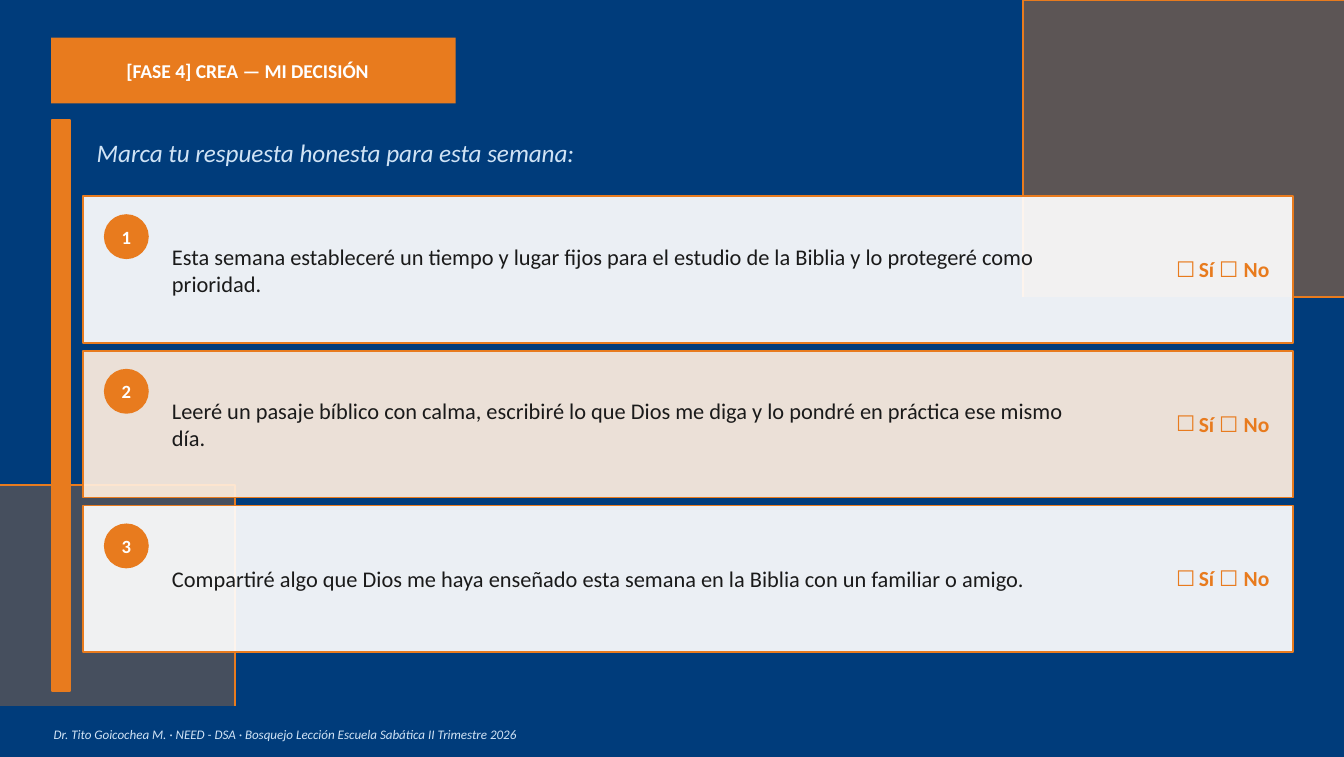
from lxml import etree
from pptx import Presentation
from pptx.dml.color import RGBColor
from pptx.enum.shapes import MSO_CONNECTOR, MSO_SHAPE
from pptx.enum.text import MSO_ANCHOR, MSO_AUTO_SIZE, PP_ALIGN
from pptx.oxml.ns import qn
from pptx.util import Inches, Pt

NAVY = RGBColor(0x00, 0x3C, 0x7B)
ORANGE = RGBColor(0xE8, 0x7B, 0x1E)
WHITE = RGBColor(0xFF, 0xFF, 0xFF)
CREAM = RGBColor(0xFF, 0xEF, 0xDF)
SKY = RGBColor(0xD0, 0xE3, 0xF5)
INK = RGBColor(0x1A, 0x1A, 0x1A)
RECT, OVAL = MSO_SHAPE.RECTANGLE, MSO_SHAPE.OVAL
STRAIGHT = MSO_CONNECTOR.STRAIGHT
LEFT, CENTER = PP_ALIGN.LEFT, PP_ALIGN.CENTER
MIDDLE, FIXED = MSO_ANCHOR.MIDDLE, MSO_AUTO_SIZE.NONE
WIDE, HIGH = 10, 5.63
PLEDGES = [
    "Esta semana estableceré un tiempo y lugar fijos para el estudio de la Biblia "
    "y lo protegeré como\vprioridad.",
    "Leeré un pasaje bíblico con calma, escribiré lo que Dios me diga "
    "y lo pondré en práctica ese mismo\vdía.",
    "Compartiré algo que Dios me haya enseñado esta semana en la Biblia "
    "con un familiar o amigo.",
]


def write(shape, text, size=12, color=INK, bold=False, italic=False,
          align=LEFT, inset=0.01):
    frame = shape.text_frame
    frame.word_wrap = True
    frame.auto_size = FIXED
    frame.vertical_anchor = MIDDLE
    frame.margin_left = Inches(inset)
    frame.margin_right = frame.margin_top = frame.margin_bottom = 0
    para = frame.paragraphs[0]
    para.text = text
    para.alignment = align
    for run in para.runs:
        font = run.font
        font.name, font.size, font.color.rgb = "Calibri", Pt(size), color
        font.bold, font.italic = bold, italic
    return para


def label(slide, box, text, **form):
    return write(slide.shapes.add_textbox(*map(Inches, box)), text, **form)


def block(slide, kind, box, fill, line=None, alpha=None):
    shape = slide.shapes.add_shape(kind, *map(Inches, box))
    shape.shadow.inherit = False
    shape.fill.solid()
    shape.fill.fore_color.rgb = fill
    if alpha:
        color = shape.element.spPr.find(qn("a:solidFill"))[0]
        etree.SubElement(color, qn("a:alpha")).set("val", str(alpha * 1000))
    if line is None:
        shape.line.fill.background()
    else:
        shape.line.color.rgb = line
        shape.line.width = Pt(1)
    return shape


def edge(slide, start, *points):
    pen = slide.shapes.build_freeform(*map(Inches, start), scale=1.0)
    pen.add_line_segments([tuple(map(Inches, p)) for p in points], close=False)
    shape = pen.convert_to_shape()
    shape.shadow.inherit = False
    shape.fill.background()
    shape.line.color.rgb = ORANGE
    shape.line.width = Pt(1)


def corners(slide):
    x, y = 7.61, 2.21
    block(slide, RECT, (x, 0, WIDE - x, y), ORANGE, alpha=40)
    edge(slide, (WIDE, 0), (x, 0), (x, y))
    rule = slide.shapes.add_connector(
        STRAIGHT, *map(Inches, (9.62, y, WIDE, y)))
    rule.line.color.rgb = ORANGE
    rule.line.width = Pt(1)
    etree.SubElement(rule.element.spPr, qn("a:effectLst"))

    x, y = 1.75, 3.61
    block(slide, RECT, (0, y, x, 5.26 - y), ORANGE, alpha=30)
    edge(slide, (x, HIGH), (x, y), (0, y))


def header(slide):
    tag = block(slide, RECT, (0.38, 0.28, 3.01, 0.49), ORANGE)
    write(tag, "[FASE 4] CREA — MI DECISIÓN", size=10.5, color=WHITE,
          bold=True, inset=0.56)
    title = slide.shapes.title
    title.left, title.top, title.width, title.height = map(
        Inches, (0.71, 0.99, 5, 0.28))
    write(title, "Marca tu respuesta honesta para esta semana:", size=13.5,
          color=SKY, italic=True)


def choice(slide, box):
    para = label(slide, box, "Sí ", size=11.5, color=ORANGE, bold=True)
    props = para._p.get_or_add_pPr()
    props.set("marL", str(Inches(0.19)))
    props.set("indent", str(Inches(-0.17)))
    etree.SubElement(props, qn("a:buFont")).set("typeface", "Lato")
    etree.SubElement(props, qn("a:buChar")).set("char", "☐")
    for text, name in (("☐ ", "Lato"), ("No", "Calibri")):
        run = para.add_run()
        run.text = text
        font = run.font
        font.name, font.size, font.bold = name, Pt(11.5), True
        font.color.rgb = ORANGE


def card(slide, box, number, text, fill):
    x, y, w, h = box
    block(slide, RECT, box, fill, ORANGE, 92)
    badge = block(slide, OVAL, (x + 0.16, y + 0.14, 0.32, 0.32), ORANGE, ORANGE)
    write(badge, str(number), size=10, color=WHITE, bold=True,
          align=CENTER, inset=0)
    label(slide, (x + 0.65, y, 7.3, h), text)
    choice(slide, (x + 8.1, y + 0.42, 0.85, 0.24))


def footer(slide, box):
    x, y, w, h = box
    block(slide, RECT, box, NAVY, NAVY)
    label(slide, (x + 0.39, y + 0.13, 5, 0.14),
          "Dr. Tito Goicochea M. · NEED - DSA · Bosquejo Lección "
          "Escuela Sabática II Trimestre 2026",
          size=7, color=SKY, italic=True)


def main():
    deck = Presentation()
    deck.slide_width, deck.slide_height = Inches(WIDE), Inches(HIGH)
    slide = deck.slides.add_slide(deck.slide_layouts[5])
    slide.background.fill.solid()
    slide.background.fill.fore_color.rgb = NAVY
    corners(slide)
    block(slide, RECT, (0.39, 0.89, 0.13, 4.25), ORANGE, ORANGE)
    header(slide)
    for i, text in enumerate(PLEDGES):
        card(slide, (0.62, 1.46 + i * 1.15, 9, 1.09), i + 1, text,
             CREAM if i % 2 else WHITE)
    footer(slide, (0, 5.26, WIDE, 0.37))
    deck.save("out.pptx")


if __name__ == "__main__":
    main()
